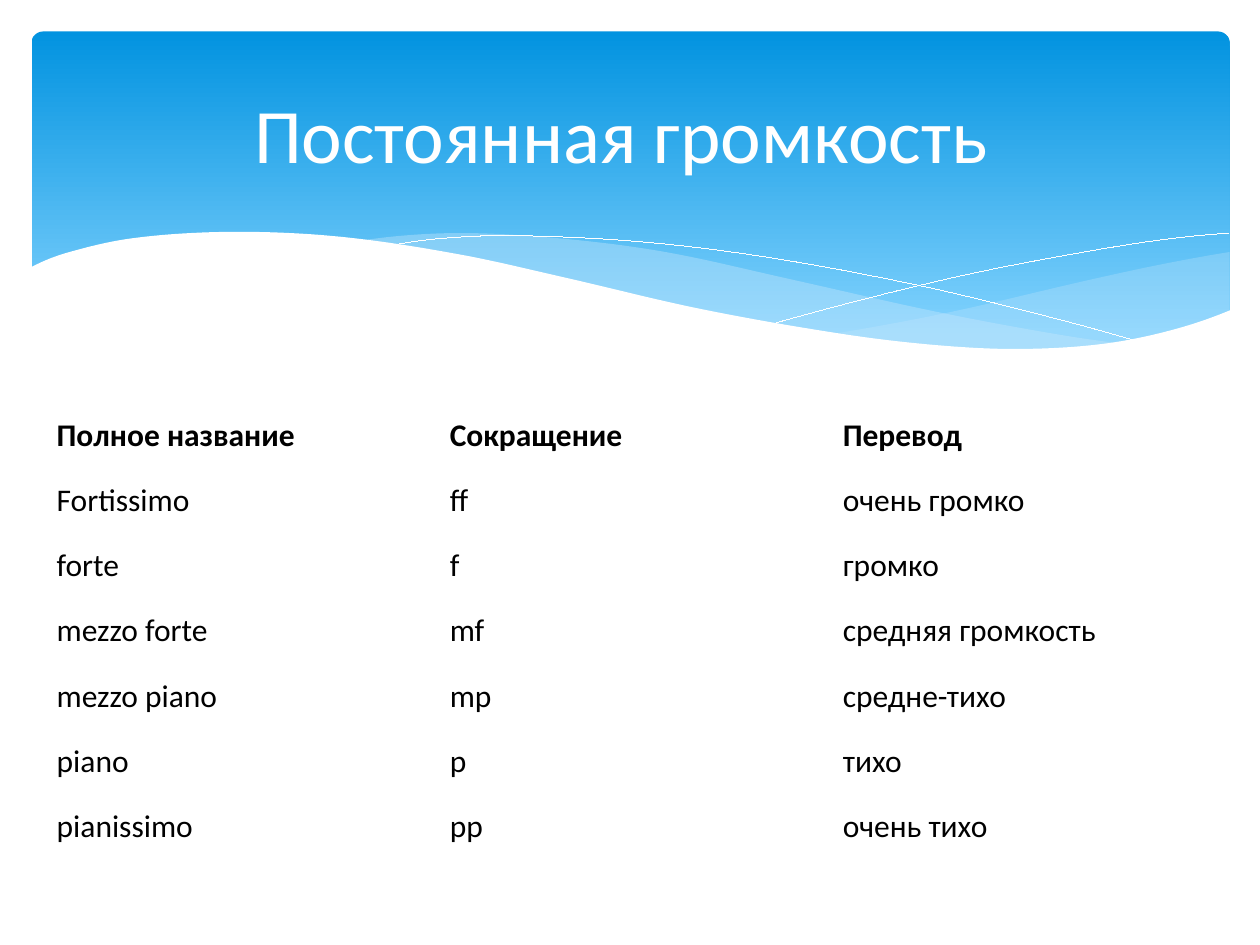
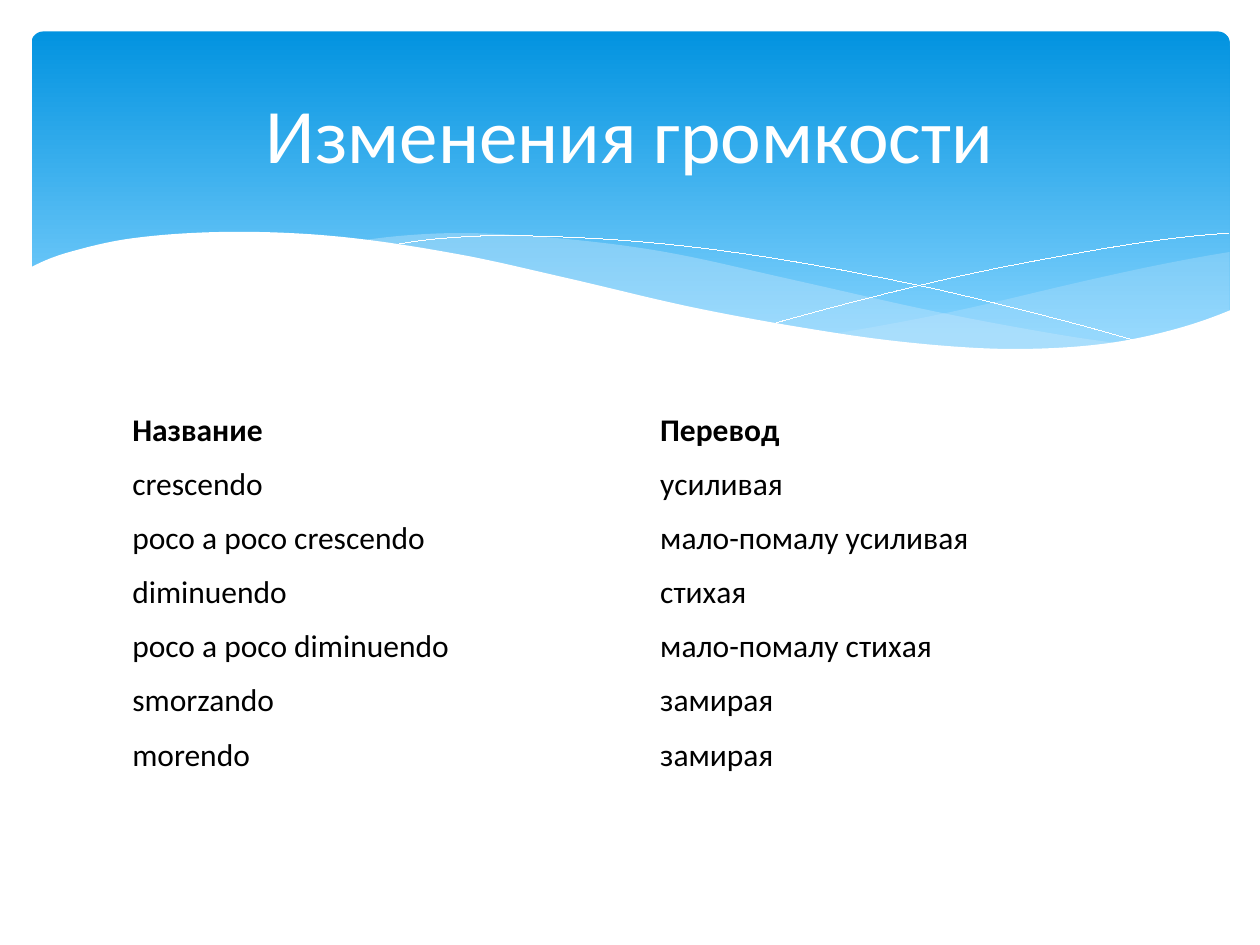
from itertools import pairwise

from pptx import Presentation
from pptx.dml.color import RGBColor
from pptx.enum.shapes import MSO_SHAPE
from pptx.enum.text import MSO_ANCHOR, PP_ALIGN
from pptx.oxml.xmlchemy import OxmlElement
from pptx.util import Inches, Pt

COLORS = {
    "band_top": "0293E0",
    "band_bottom": "83D3FE",
    "wave": "C6E7FC",
    "white": "FFFFFF",
    "text": "000000",
}

STEPS_PER_SPAN = 10

RIGHT_WAVE_TOP = [(6.61, 2.65), (7.53, 2.48), (8.61, 2.23), (9.21, 2.1), (9.76, 2)]
RIGHT_WAVE_BOTTOM = [(6.61, 2.65), (7.32, 2.74), (8.1, 2.78), (8.89, 2.72), (9.76, 2.47)]
MIDDLE_WAVE_TOP = [(2.86, 1.91), (3.6, 1.85), (4.42, 1.89), (5.28, 2), (6.29, 2.22),
                   (7.41, 2.47), (8.37, 2.65), (8.93, 2.73)]
MIDDLE_WAVE_BOTTOM = [(2.86, 1.91), (3.62, 2.03), (4.49, 2.22), (5.66, 2.48), (6.65, 2.66),
                      (7.48, 2.76), (8.18, 2.78), (8.93, 2.73)]
FALLING_LINE = [(3.09, 1.95), (3.53, 1.89), (4.1, 1.87), (5.1, 1.92), (6.08, 2.04),
                (7.27, 2.26), (8.31, 2.51), (9.07, 2.72)]
RISING_LINE = [(6.13, 2.57), (6.95, 2.35), (7.76, 2.16), (8.66, 1.99), (9.24, 1.9), (9.75, 1.85)]
PAGE_EDGE = [(0.23, 2.13), (0.52, 2.01), (1.06, 1.89), (1.85, 1.84), (2.71, 1.88),
             (3.65, 2.02), (4.47, 2.2), (5.55, 2.45), (6.68, 2.65), (7.44, 2.74),
             (8.09, 2.77), (8.75, 2.73), (9.3, 2.62), (9.77, 2.46)]
PAGE_BOTTOM = [(0.23, 3.29), (9.77, 3.29)]

CONSTANT_VOLUME = [
    ("Полное название", "Сокращение", "Перевод"),
    ("Fortissimo", "ff", "очень громко"),
    ("forte", "f", "громко"),
    ("mezzo forte", "mf", "средняя громкость"),
    ("mezzo piano", "mp", "средне-тихо"),
    ("piano", "p", "тихо"),
    ("pianissimo", "pp", "очень тихо"),
]
VOLUME_CHANGES = [
    ("Название", "Перевод"),
    ("crescendo", "усиливая"),
    ("poco a poco crescendo", "мало-помалу усиливая"),
    ("diminuendo", "стихая"),
    ("poco a poco diminuendo", "мало-помалу стихая"),
    ("smorzando", "замирая"),
    ("morendo", "замирая"),
]


def rgb(name):
    return RGBColor.from_string(COLORS[name])


def slope(start, end):
    return (end[1] - start[1]) / (end[0] - start[0])


def smooth_curve(anchors):
    inner = [slope(before, after) for before, after in zip(anchors, anchors[2:])]
    first = 2 * slope(*anchors[:2]) - inner[0]
    last = 2 * slope(*anchors[-2:]) - inner[-1]
    slopes = [first, *inner, last]
    points = [anchors[0]]
    for (start, end), (start_slope, end_slope) in zip(pairwise(anchors), pairwise(slopes)):
        width = end[0] - start[0]
        for step in range(1, STEPS_PER_SPAN + 1):
            t = step / STEPS_PER_SPAN
            blend = t * t * (3 - 2 * t)
            y = (start[1] + blend * (end[1] - start[1])
                 + width * t * (1 - t) * ((1 - t) * start_slope - t * end_slope))
            points.append((start[0] + t * width, y))
    return points


class Deck:
    font_name = "Calibri"

    def __init__(self):
        self.presentation = Presentation()
        self.presentation.slide_width = Inches(10)
        self.presentation.slide_height = Inches(7.5)
        self.slide = None

    def add_slide(self, title):
        self.slide = self.presentation.slides.add_slide(self.presentation.slide_layouts[6])
        self.band()
        self.wave(smooth_curve(RIGHT_WAVE_TOP), smooth_curve(RIGHT_WAVE_BOTTOM), "wave", 29)
        self.wave(smooth_curve(MIDDLE_WAVE_TOP), smooth_curve(MIDDLE_WAVE_BOTTOM), "wave", 40)
        self.curve(FALLING_LINE)
        self.curve(RISING_LINE)
        self.wave(smooth_curve(PAGE_EDGE), PAGE_BOTTOM, "white")
        self.title(title)

    def band(self):
        shape = self.slide.shapes.add_shape(
            MSO_SHAPE.ROUNDED_RECTANGLE, Inches(0.25), Inches(0.25), Inches(9.51), Inches(2.7))
        shape.adjustments[0] = 0.034
        shape.shadow.inherit = False
        shape.line.fill.background()
        shape.fill.gradient()
        shape.fill.gradient_angle = 270
        stops = shape.fill.gradient_stops
        for stop, position, color in zip(stops, (0, 0.9), ("band_top", "band_bottom")):
            stop.position = position
            stop.color.rgb = rgb(color)

    def outline(self, points, close):
        start, *rest = [(Inches(x), Inches(y)) for x, y in points]
        builder = self.slide.shapes.build_freeform(*start)
        builder.add_line_segments(rest, close=close)
        shape = builder.convert_to_shape()
        shape.shadow.inherit = False
        return shape

    def wave(self, top, bottom, color, opacity=100):
        shape = self.outline(top + bottom[::-1], close=True)
        shape.line.fill.background()
        shape.fill.solid()
        shape.fill.fore_color.rgb = rgb(color)
        if opacity < 100:
            alpha = OxmlElement("a:alpha")
            alpha.set("val", str(opacity * 1000))
            shape.element.spPr.find(".//{*}srgbClr").append(alpha)

    def curve(self, anchors):
        shape = self.outline(smooth_curve(anchors), close=False)
        shape.fill.background()
        shape.line.color.rgb = rgb("white")
        shape.line.width = Pt(0.01)

    def style(self, paragraph, size, color, bold=False):
        paragraph.font.name = self.font_name
        paragraph.font.size = Pt(size)
        paragraph.font.bold = bold
        paragraph.font.color.rgb = rgb(color)

    def title(self, text):
        box = self.slide.shapes.add_textbox(Inches(0.5), Inches(0.37), Inches(9), Inches(1.37))
        frame = box.text_frame
        frame.word_wrap = True
        frame.vertical_anchor = MSO_ANCHOR.MIDDLE
        paragraph = frame.paragraphs[0]
        paragraph.text = text
        paragraph.alignment = PP_ALIGN.CENTER
        self.style(paragraph, 44, "white")

    def table(self, rows, left, width, height):
        table = self.slide.shapes.add_table(
            len(rows), len(rows[0]), Inches(left), Inches(3.2),
            Inches(width), Inches(height)).table
        table.first_row = False
        table.horz_banding = False
        for row_index, row in enumerate(rows):
            for column_index, text in enumerate(row):
                cell = table.cell(row_index, column_index)
                cell.fill.background()
                cell.vertical_anchor = MSO_ANCHOR.MIDDLE
                cell.text = text
                self.style(cell.text_frame.paragraphs[0], 18, "text", bold=row_index == 0)


def main():
    deck = Deck()
    deck.add_slide("Постоянная громкость ")
    deck.table(CONSTANT_VOLUME, left=0.35, width=9.36, height=3.62)
    deck.add_slide("Изменения громкости")
    deck.table(VOLUME_CHANGES, left=0.95, width=8.38, height=3.01)
    deck.presentation.save("out.pptx")


if __name__ == "__main__":
    main()
